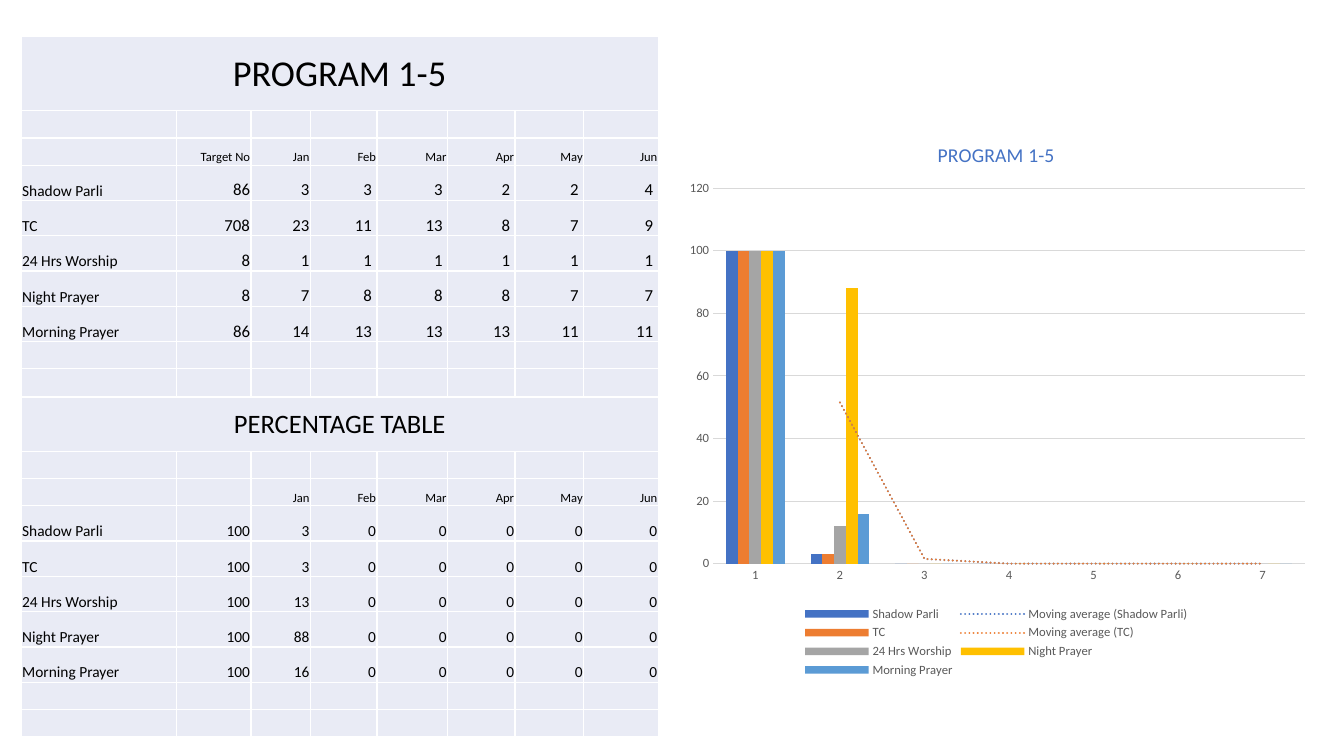
from lxml import etree
from pptx import Presentation
from pptx import util as u
from pptx.chart.data import CategoryChartData
from pptx.dml.color import RGBColor
from pptx.enum import chart as ch, text
from pptx.oxml import ns, parse_xml

FONT = "Calibri"
PANEL, WHITE, BLACK, GREY, RULE = "E9EBF5", "FFFFFF", "000000", "595959", "D9D9D9"
TITLE = "PROGRAM 1-5"
MONTHS = ["Jan", "Feb", "Mar", "Apr", "May", "Jun"]
PROGRAMS = ["Shadow Parli", "TC", "24 Hrs Worship", "Night Prayer", "Morning Prayer"]
COUNTS = [
    [86, 3, 3, 3, 2, 2, 4],
    [708, 23, 11, 13, 8, 7, 9],
    [8, 1, 1, 1, 1, 1, 1],
    [8, 7, 8, 8, 8, 7, 7],
    [86, 14, 13, 13, 13, 11, 11],
]
JANUARY_SHARES = [3, 3, 13, 88, 16]
CHART_SHARES = [3, 3, 12, 88, 16]
SERIES_COLORS = ["4472C4", "ED7D31", "A5A5A5", "FFC000", "5B9BD5"]
TREND_COUNT = 2

COLUMN_WIDTHS = [1.54, 0.74, 0.59, 0.66, 0.7, 0.67, 0.68, 0.74]
THIN, DATA = 0.27, 0.35
ROW_HEIGHTS = ([0.74, THIN, THIN] + [DATA] * 5 + [THIN, 0.28]
               + [0.54, THIN, THIN] + [DATA] * 5 + [THIN] * 2)
BLOCKS = [
    (0, TITLE, 26, "Target No", COUNTS, 12, 0.05),
    (10, "PERCENTAGE TABLE", 19, "",
     [[100, share] + [0] * 5 for share in JANUARY_SHARES], 11, 0.01),
]
PLOT = {"x": 0.06, "y": 0.12, "w": 0.92, "h": 0.67}


def color(value):
    return RGBColor.from_string(value)


def style_font(font, size, value):
    font.name, font.size, font.bold = FONT, u.Pt(size), False
    font.color.rgb = color(value)


def style_line(line, value, width):
    line.color.rgb = color(value)
    line.width = u.Pt(width)


def style_cell(cell):
    cell.fill.solid()
    cell.fill.fore_color.rgb = color(PANEL)
    cell.margin_left = cell.margin_right = cell.margin_top = u.Inches(0.01)
    cell.margin_bottom = 0
    cell.text_frame.paragraphs[0]._p.get_or_add_endParaRPr().set("sz", "900")
    for index, side in enumerate(["lnL", "lnR", "lnT", "lnB"]):
        border = parse_xml(
            f'<a:{side} {ns.nsdecls("a")} w="12700"><a:solidFill>'
            f'<a:srgbClr val="{WHITE}"/></a:solidFill></a:{side}>')
        cell._tc.tcPr.insert(index, border)


def write(cell, content, size, align, anchor=text.MSO_ANCHOR.BOTTOM):
    if content == "":
        return
    para = cell.text_frame.paragraphs[0]
    para.text = str(content)
    para.alignment = align
    cell.vertical_anchor = anchor
    style_font(para.runs[0].font, size, BLACK)


def add_program_table(page):
    frame = page.shapes.add_table(
        len(ROW_HEIGHTS), len(COLUMN_WIDTHS), u.Inches(0.21), u.Inches(0.36),
        u.Inches(sum(COLUMN_WIDTHS)), u.Inches(sum(ROW_HEIGHTS)))
    table = frame.table
    table.first_row = table.horz_banding = False
    for column, width in zip(table.columns, COLUMN_WIDTHS):
        column.width = u.Inches(width)
    for row, height in zip(table.rows, ROW_HEIGHTS):
        row.height = u.Inches(height)
    for cell in table.iter_cells():
        style_cell(cell)

    align = text.PP_ALIGN
    for top, heading, heading_size, target, rows, size, later_margin in BLOCKS:
        title = table.cell(top, 0)
        title.merge(table.cell(top, len(COLUMN_WIDTHS) - 1))
        write(title, heading, heading_size, align.CENTER, text.MSO_ANCHOR.MIDDLE)
        for column, label in enumerate([target] + MONTHS, 1):
            write(table.cell(top + 2, column), label, 9, align.RIGHT)
        for row, (program, values) in enumerate(zip(PROGRAMS, rows), top + 3):
            write(table.cell(row, 0), program, 11, align.LEFT)
            for column, value in enumerate(values, 1):
                cell = table.cell(row, column)
                write(cell, value, size, align.RIGHT)
                if column > 2:
                    cell.margin_right = u.Inches(later_margin)


def add_trend(series, value):
    trend = parse_xml(
        f'<c:trendline {ns.nsdecls("c", "a")}><c:spPr><a:ln w="19050" cap="rnd">'
        f'<a:solidFill><a:srgbClr val="{value}"/></a:solidFill>'
        '<a:prstDash val="sysDot"/></a:ln></c:spPr>'
        '<c:trendlineType val="movingAvg"/><c:period val="2"/>'
        '<c:dispRSqr val="0"/><c:dispEq val="0"/></c:trendline>')
    series._element.find(ns.qn("c:cat")).addprevious(trend)


def place_plot(chart):
    area = chart._chartSpace.chart.plotArea
    for old in area.findall(ns.qn("c:layout")):
        area.remove(old)
    layout = etree.Element(ns.qn("c:layout"))
    manual = etree.SubElement(layout, ns.qn("c:manualLayout"))
    settings = {"layoutTarget": "inner", "xMode": "edge", "yMode": "edge", **PLOT}
    for name, value in settings.items():
        etree.SubElement(manual, ns.qn(f"c:{name}")).set("val", str(value))
    area.insert(0, layout)


def add_program_chart(page):
    data = CategoryChartData(number_format="0")
    data.categories = [str(number) for number in range(1, 8)]
    for program, share in zip(PROGRAMS, CHART_SHARES):
        data.add_series(program, [100, share] + [0] * 5)
    chart = page.shapes.add_chart(
        ch.XL_CHART_TYPE.COLUMN_CLUSTERED, u.Inches(6.69), u.Inches(1.2),
        u.Inches(6.38), u.Inches(5.56), data).chart
    style_font(chart.font, 10, BLACK)
    chart.has_title = True
    chart.chart_title.text_frame.text = TITLE
    chart.chart_title.include_in_layout = False
    style_font(chart.chart_title.text_frame.paragraphs[0].runs[0].font, 14, "4472C4")
    chart.has_legend = True
    chart.legend.position = ch.XL_LEGEND_POSITION.BOTTOM
    chart.legend.include_in_layout = False
    style_font(chart.legend.font, 9, GREY)

    for axis in (chart.category_axis, chart.value_axis):
        axis.major_tick_mark = axis.minor_tick_mark = ch.XL_TICK_MARK.NONE
        style_font(axis.tick_labels.font, 9, GREY)
    style_line(chart.category_axis.format.line, RULE, 0.75)
    values = chart.value_axis
    values.format.line.fill.background()
    values.minimum_scale, values.maximum_scale, values.major_unit = 0, 120, 20
    values.has_major_gridlines = True
    style_line(values.major_gridlines.format.line, RULE, 0.75)
    values.tick_labels.number_format = "0"
    values.tick_labels.number_format_is_linked = False

    plot = chart.plots[0]
    plot.gap_width, plot.overlap, plot.vary_by_categories = 219, 0, False
    for index, (series, value) in enumerate(zip(plot.series, SERIES_COLORS)):
        series.format.fill.solid()
        series.format.fill.fore_color.rgb = color(value)
        if index < TREND_COUNT:
            add_trend(series, value)
    place_plot(chart)


def main():
    deck = Presentation()
    deck.slide_width, deck.slide_height = u.Inches(13.33), u.Inches(7.5)
    page = deck.slides.add_slide(deck.slide_layouts[6])
    add_program_table(page)
    add_program_chart(page)
    deck.save("out.pptx")


if __name__ == "__main__":
    main()
